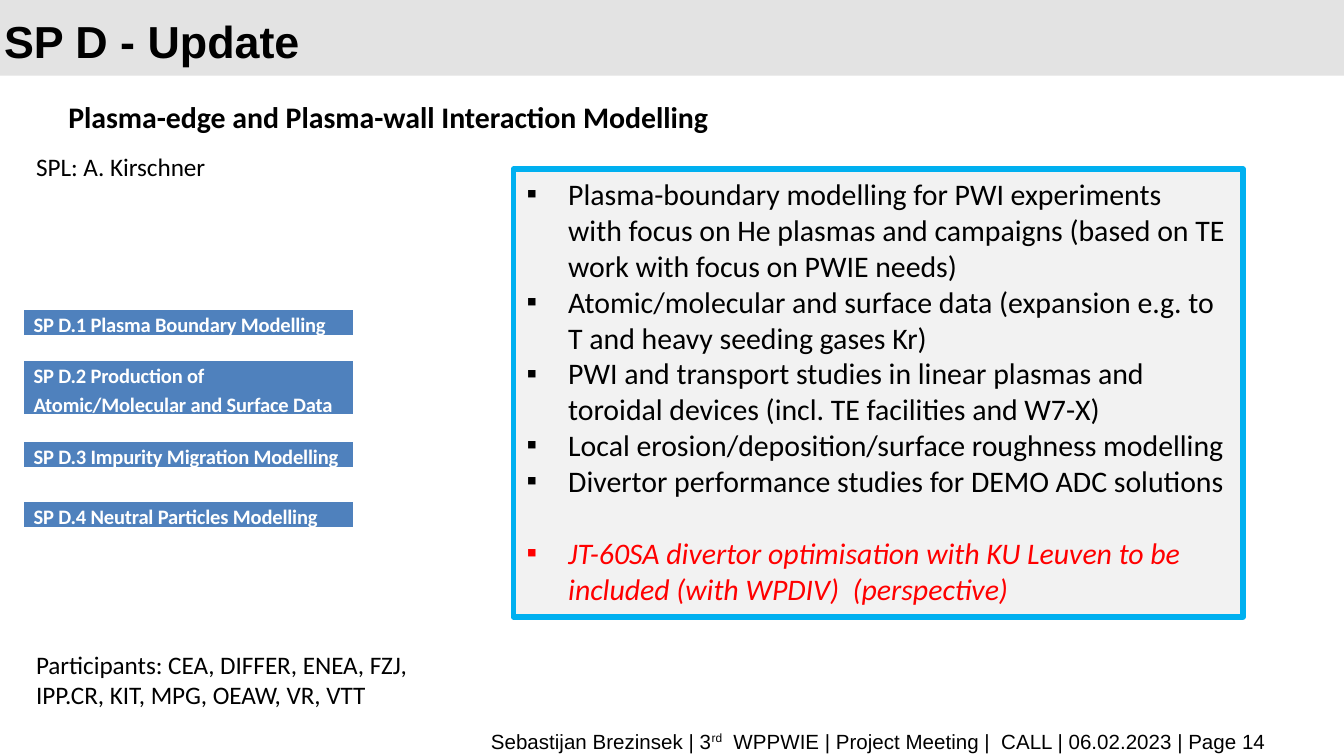
import pptx
import pptx.util
import pptx.dml.color
import pptx.enum.shapes
import pptx.enum.text
import pptx.oxml.ns
from dataclasses import dataclass
from lxml import etree

Pt = pptx.util.Pt
Inches = pptx.util.Inches
ALIGN = pptx.enum.text.PP_ALIGN
ANCHOR = pptx.enum.text.MSO_ANCHOR
RECT = pptx.enum.shapes.MSO_SHAPE.RECTANGLE
qn = pptx.oxml.ns.qn

WIDTH, HEIGHT = Inches(10), Inches(5.625)
COL, ROW = WIDTH / 100, HEIGHT / 100
INDENT = Inches(0.31)


@dataclass(frozen=True)
class Theme:
    head: str = "Arial"
    body: str = "Calibri"
    black: str = "000000"
    white: str = "FFFFFF"
    red: str = "FF0000"
    band: str = "E3E3E3"
    panel: str = "F2F2F2"
    frame: str = "00B0F0"
    label: str = "4F81BD"
    title: float = 24
    large: float = 16
    note: float = 13.5
    small: float = 11


THEME = Theme()

# Top row, height in rows, text
TASKS = [
    (40.9, 3.75, "SP D.1 Plasma Boundary Modelling"),
    (47.65, 7.5, "SP D.2 Production of Atomic/Molecular and Surface Data"),
    (58.3, 3.75, "SP D.3 Impurity Migration Modelling"),
    (66.3, 3.75, "SP D.4 Neutral Particles Modelling"),
]

# Has a bullet, text
TOPICS = [
    (True, "Plasma-boundary modelling for PWI experiments"),
    (False, "with focus on He plasmas and campaigns (based on TE"),
    (False, "work with focus on PWIE needs)"),
    (True, "Atomic/molecular and surface data (expansion e.g. to "
           "T and heavy seeding gases Kr)"),
    (True, "PWI and transport studies in linear plasmas and "
           "toroidal devices (incl. TE facilities and W7-X)"),
    (True, "Local erosion/deposition/surface roughness modelling"),
    (True, "Divertor performance studies for DEMO ADC solutions"),
    (True, "JT-60SA divertor optimisation with KU Leuven to be "
           "included (with WPDIV)  (perspective)"),
]


def rgb(code):
    return pptx.dml.color.RGBColor.from_string(code)


def grid(left, top, wide, high):
    """Turn columns and rows into slide lengths."""
    return [round(n) for n in (left * COL, top * ROW, wide * COL, high * ROW)]


def style(para, size, face=THEME.body, color=THEME.black, bold=False):
    for run in para.runs:
        run.font.size = Pt(size)
        run.font.name = face
        run.font.bold = bold
        run.font.color.rgb = rgb(color)


def add_title(slide, text):
    title = slide.shapes.title
    title.left, title.top, title.width, title.height = grid(-0.7, 1.6, 82.5, 6.75)
    frame = title.text_frame
    frame.text = text
    frame.vertical_anchor = ANCHOR.MIDDLE
    para = frame.paragraphs[0]
    para.alignment = ALIGN.LEFT
    para.line_spacing = Pt(32)
    style(para, THEME.title, THEME.head, bold=True)


def add_rect(slide, area, fill, line=None):
    rect = slide.shapes.add_shape(RECT, *grid(*area))
    rect.shadow.inherit = False
    rect.fill.solid()
    rect.fill.fore_color.rgb = rgb(fill)
    if line:
        rect.line.color.rgb = rgb(line)
        rect.line.width = Pt(3)
    else:
        rect.line.fill.background()
    return rect


def add_text(slide, area, text, size, bold=False):
    box = slide.shapes.add_textbox(*grid(*area))
    box.text_frame.word_wrap = True
    box.text_frame.text = text
    para = box.text_frame.paragraphs[0]
    style(para, size, bold=bold)
    return para


def add_edge(cell, side, width):
    props = cell._tc.get_or_add_tcPr()
    edge = etree.SubElement(props, qn(f"a:ln{side}"), w=str(Pt(width)))
    fill = etree.SubElement(edge, qn("a:solidFill"))
    etree.SubElement(fill, qn("a:srgbClr"), val=THEME.white)


def add_task(slide, top, high, text):
    """Add one task label as a table of a single cell."""
    table = slide.shapes.add_table(1, 1, *grid(1.7, top, 24.6, high)).table
    table.first_row = table.horz_banding = False
    cell = table.cell(0, 0)
    for side, width in (("L", 1), ("R", 1), ("T", 1), ("B", 3)):
        add_edge(cell, side, width)
    cell.fill.solid()
    cell.fill.fore_color.rgb = rgb(THEME.label)
    cell.margin_left = cell.margin_right = Inches(0.08)
    cell.margin_top = cell.margin_bottom = 0
    cell.text_frame.text = text
    para = cell.text_frame.paragraphs[0]
    para.line_spacing = 1.15
    para.space_after = Pt(2.4)
    style(para, THEME.small, color=THEME.white, bold=True)
    para.runs[0].font._element.set("spc", "-10")


def set_bullet(para, shown):
    props = para._p.get_or_add_pPr()
    props.set("marL", str(INDENT))
    props.set("indent", str(-INDENT if shown else 0))
    if shown:
        etree.SubElement(props, qn("a:buFont"), typeface=THEME.head)
        etree.SubElement(props, qn("a:buChar"), char="▪")


def add_topics(slide):
    panel = add_rect(slide, (38.2, 22.4, 54.3, 59.2), THEME.panel, THEME.frame)
    frame = panel.text_frame
    frame.word_wrap = True
    frame.vertical_anchor = ANCHOR.TOP
    frame.text = "\n".join(text for _, text in TOPICS)
    for para, (shown, _) in zip(frame.paragraphs, TOPICS):
        para.alignment = ALIGN.LEFT
        set_bullet(para, shown)
        style(para, THEME.large)
    last = frame.paragraphs[-1]
    last.space_before = Pt(19.5)
    style(last, THEME.large, color=THEME.red)
    last.runs[0].font.italic = True


def add_footer(slide):
    para = add_text(slide, (5.1, 95.5, 90.1, 3.9),
                    "Sebastijan Brezinsek | 3", THEME.small)
    para.alignment = ALIGN.RIGHT
    raised = para.add_run()
    raised.text = "rd"
    para.add_run().text = ("  WPPWIE | Project Meeting |  CALL | "
                           "06.02.2023 | Page 14")
    style(para, THEME.small, THEME.head)
    raised.font._element.set("baseline", "30000")


def main():
    deck = pptx.Presentation()
    deck.slide_width, deck.slide_height = WIDTH, HEIGHT
    slide = deck.slides.add_slide(deck.slide_layouts[5])

    band = add_rect(slide, (0, 0, 100, 10), THEME.band)
    band._element.addnext(slide.shapes.title._element)
    add_title(slide, "SP D - Update")

    topic = add_text(slide, (4.1, 11.9, 95.6, 6.6),
                     "Plasma-edge and Plasma-wall Interaction Modelling",
                     THEME.large, bold=True)
    topic.alignment = ALIGN.JUSTIFY
    topic.line_spacing = 1.05
    topic.space_after = Pt(6)

    add_text(slide, (1.7, 19.2, 24.2, 5.9), "SPL: A. Kirschner", THEME.note)
    for task in TASKS:
        add_task(slide, *task)
    add_text(slide, (1.7, 85, 29.9, 10),
             "Participants: CEA, DIFFER, ENEA, FZJ, IPP.CR, KIT, MPG, "
             "OEAW, VR, VTT", THEME.note)
    add_topics(slide)
    add_footer(slide)
    deck.save("out.pptx")


if __name__ == "__main__":
    main()
